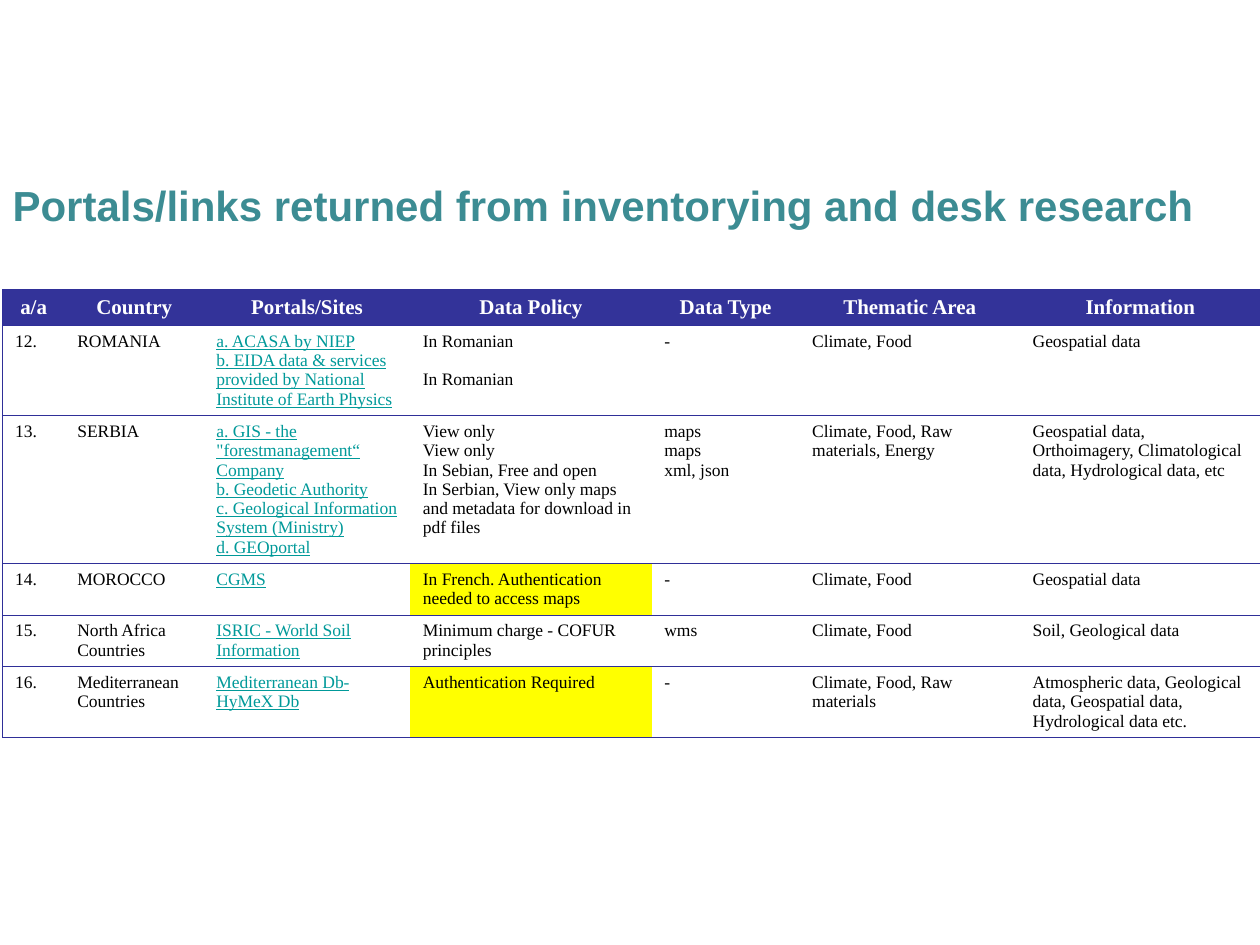
from lxml import etree
from pptx import Presentation
from pptx.dml.color import RGBColor
from pptx.enum.text import MSO_ANCHOR, PP_ALIGN
from pptx.oxml.ns import qn
from pptx.util import Pt

LEFT, CENTER = PP_ALIGN.LEFT, PP_ALIGN.CENTER
MIDDLE = MSO_ANCHOR.MIDDLE

TEAL = RGBColor(0x3C, 0x8C, 0x93)
LINK = RGBColor(0x00, 0x99, 0x99)
NAVY = RGBColor(0x33, 0x33, 0x99)
RULE = RGBColor(0x2F, 0x2F, 0x98)
YELLOW = RGBColor(0xFF, 0xFF, 0x00)
WHITE = RGBColor(0xFF, 0xFF, 0xFF)
BLACK = RGBColor(0x00, 0x00, 0x00)

TITLE_FONT, TABLE_FONT = "Arial", "Times New Roman"
LINE_GAP = 11  # one empty line of table text
PORTALS, POLICY = 2, 3  # columns with links and with highlights

HEADERS = ["a/a", "Country", "Portals/Sites", "Data Policy", "Data Type",
           "Thematic Area", "Information"]
# One tuple per country; each cell is a list of its paragraphs
ROWS = [
    (["12."], ["ROMANIA"],
     ["a. ACASA by NIEP",
      "b. EIDA data & services provided by National Institute of Earth Physics"],
     ["In Romanian", "In Romanian"],
     ["-"], ["Climate, Food"], ["Geospatial data"]),
    (["13."], ["SERBIA"],
     ["a. GIS - the \"forestmanagement“ Company", "b. Geodetic Authority",
      "c. Geological Information System (Ministry)", "d. GEOportal"],
     ["View only", "View only", "In Sebian, Free and open",
      "In Serbian, View only maps", "and metadata for download in pdf files"],
     ["maps", "maps", "xml, json"],
     ["Climate, Food, Raw materials, Energy"],
     ["Geospatial data, Orthoimagery, Climatological data, Hydrological data, etc"]),
    (["14."], ["MOROCCO"], ["CGMS"],
     ["In French. Authentication needed to access maps"],
     ["-"], ["Climate, Food"], ["Geospatial data"]),
    (["15."], ["North Africa Countries"], ["ISRIC - World Soil Information"],
     ["Minimum charge - COFUR principles"],
     ["wms"], ["Climate, Food"], ["Soil, Geological data"]),
    (["16."], ["Mediterranean Countries"], ["Mediterranean Db-HyMeX Db"],
     ["Authentication Required"],
     ["-"], ["Climate, Food, Raw materials"],
     ["Atmospheric data, Geological data, Geospatial data, Hydrological data etc."]),
]
SPACED_ROWS = {1}  # policy entries set apart by an empty line
HIGHLIGHTED_ROWS = {3, 5}
COL_WIDTHS = [35.5, 79.5, 118, 138, 84.5, 126, 137.5]
ROW_HEIGHTS = [20, 51.5, 84.5, 29.5, 29.5, 40.5]


def add_run(p, text, font, size, color, bold=False, underline=False):
    r = p.add_run()
    r.text = text
    f = r.font
    f.name, f.size, f.bold, f.underline = font, Pt(size), bold, underline
    f.color.rgb = color


def set_borders(cell, ruled):
    """Rule the named sides of a cell and clear the others."""
    tcPr = cell._tc.get_or_add_tcPr()
    for side in "LRTB":
        ln = etree.SubElement(tcPr, qn(f"a:ln{side}"), w=str(Pt(0.75)))
        if side in ruled:
            fill = etree.SubElement(ln, qn("a:solidFill"))
            etree.SubElement(fill, qn("a:srgbClr"), val=str(RULE))
        else:
            etree.SubElement(ln, qn("a:noFill"))


def fill_cell(cell, fill):
    if fill is None:
        cell.fill.background()
    else:
        cell.fill.solid()
        cell.fill.fore_color.rgb = fill


def add_title(s, x, y, w, h):
    sp = s.shapes.title
    sp.left, sp.top, sp.width, sp.height = Pt(x), Pt(y), Pt(w), Pt(h)
    tf = sp.text_frame
    tf.word_wrap = True
    tf.vertical_anchor = MIDDLE
    p = tf.paragraphs[0]
    p.alignment = LEFT
    add_run(p, "Portals/links returned from inventorying and desk research",
            TITLE_FONT, 24, TEAL, bold=True)


def add_portal_table(s, x, y, w, h):
    table = s.shapes.add_table(len(ROWS) + 1, len(HEADERS),
                               Pt(x), Pt(y), Pt(w), Pt(h)).table
    table.first_row = table.horz_banding = False
    for col, width in zip(table.columns, COL_WIDTHS):
        col.width = Pt(width)
    for row, height in zip(table.rows, ROW_HEIGHTS):
        row.height = Pt(height)

    last = len(HEADERS) - 1
    for i, row in enumerate([[[name] for name in HEADERS], *ROWS]):
        for j, lines in enumerate(row):
            cell = table.cell(i, j)
            set_borders(cell, "TB" + "L" * (j == 0) + "R" * (j == last))

            # Header band, highlighted policies, plain cells
            header = i == 0
            link = j == PORTALS and not header
            highlighted = j == POLICY and i in HIGHLIGHTED_ROWS
            fill_cell(cell, NAVY if header else YELLOW if highlighted else None)

            tf = cell.text_frame
            for k, line in enumerate(lines):
                p = tf.add_paragraph() if k else tf.paragraphs[0]
                p.alignment = CENTER if header else LEFT
                if k and j == POLICY and i in SPACED_ROWS:
                    p.space_before = Pt(LINE_GAP)
                add_run(p, line, TABLE_FONT, 12 if header else 10,
                        WHITE if header else LINK if link else BLACK,
                        bold=header, underline=link)


def main():
    prs = Presentation()
    prs.slide_width, prs.slide_height = Pt(720), Pt(540)
    s = prs.slides.add_slide(prs.slide_layouts[5])
    add_title(s, 0, 88.5, 720, 57)
    add_portal_table(s, 1.5, 165.5, sum(COL_WIDTHS), sum(ROW_HEIGHTS))
    prs.save("out.pptx")


if __name__ == "__main__":
    main()
